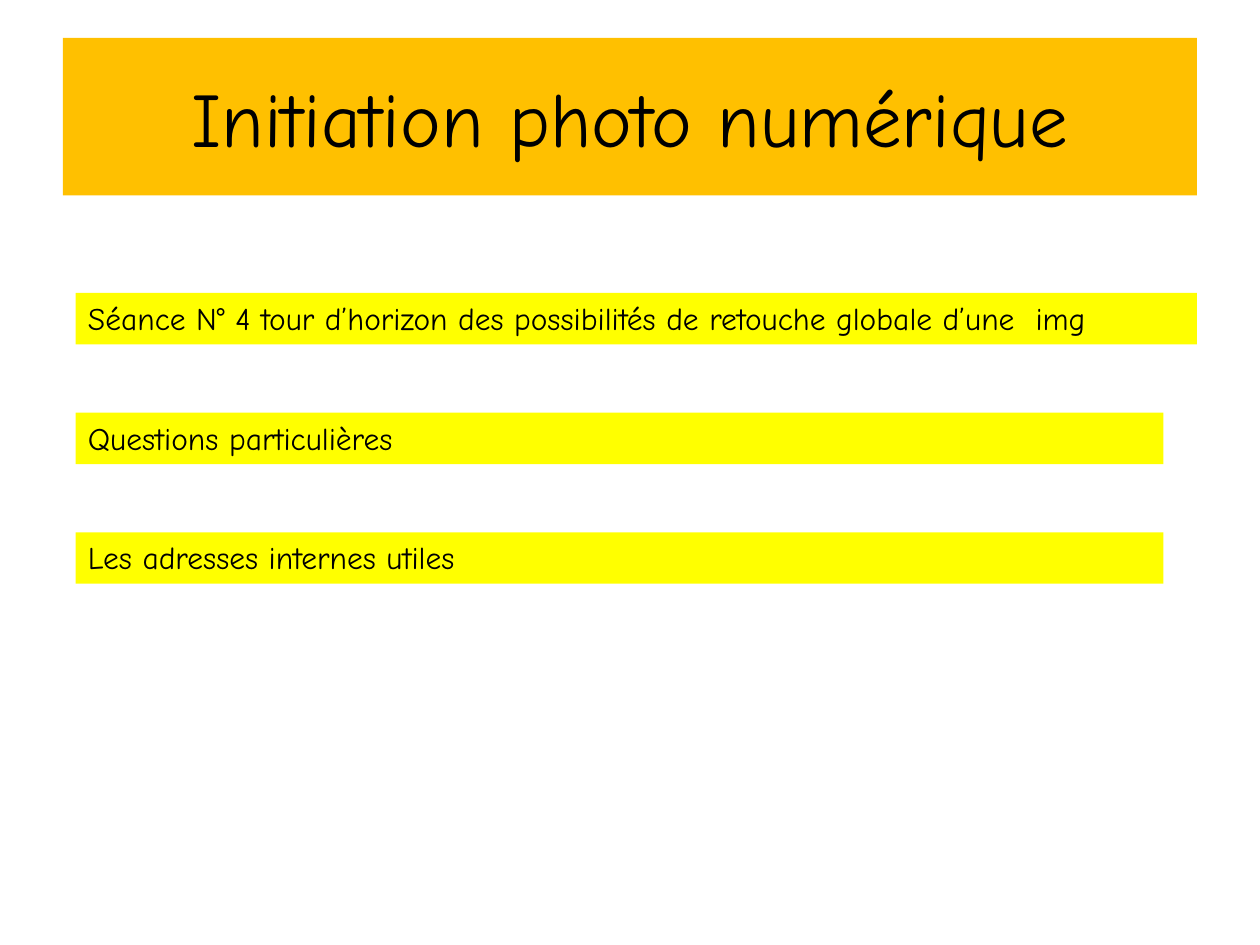
from dataclasses import dataclass

from pptx import Presentation
from pptx.dml.color import RGBColor
from pptx.enum.text import MSO_ANCHOR, PP_ALIGN
from pptx.util import Inches, Pt


@dataclass(frozen=True)
class Theme:
    """Colours, font and type sizes of the slide."""
    font: str = "Comic Neue"
    text: RGBColor = RGBColor(0x00, 0x00, 0x00)
    banner: RGBColor = RGBColor(0xFF, 0xC0, 0x00)
    topic: RGBColor = RGBColor(0xFF, 0xFF, 0x00)
    title_size: Pt = Pt(44)
    topic_size: Pt = Pt(18)


@dataclass(frozen=True)
class Box:
    """A rectangle in inches."""
    left: float
    top: float
    width: float
    height: float

    def share(self, left, top, width, height):
        """Return the box lying at the given shares of this one."""
        return Box(self.left + left * self.width, self.top + top * self.height,
                   width * self.width, height * self.height)


THEME = Theme()
PAGE = Box(0, 0, 10, 7.5)
TITLE = "Initiation photo numérique"
TOPICS = [
    ("Séance N° 4 tour d’horizon des possibilités de retouche globale d’une  img", 1),
    ("Questions particulières", 0.97),
    ("Les adresses internes utiles", 0.97),
]


def add_band(slide, box, text, fill, size):
    """Add a filled text box and return its text frame and paragraph."""
    shape = slide.shapes.add_textbox(*map(Inches, (box.left, box.top, box.width, box.height)))
    shape.fill.solid()
    shape.fill.fore_color.rgb = fill
    frame = shape.text_frame
    frame.word_wrap = True
    paragraph = frame.paragraphs[0]
    paragraph.text = text
    paragraph.font.name = THEME.font
    paragraph.font.size = size
    paragraph.font.color.rgb = THEME.text
    return frame, paragraph


def add_title(slide, box):
    """Fill the box with the centred title banner."""
    frame, paragraph = add_band(slide, box, TITLE, THEME.banner, THEME.title_size)
    frame.vertical_anchor = MSO_ANCHOR.MIDDLE
    paragraph.alignment = PP_ALIGN.CENTER


def add_topics(slide, box):
    """Stack the topic bands in equal rows of the box."""
    row = 1 / len(TOPICS)
    for index, (text, width) in enumerate(TOPICS):
        band = box.share(0, index * row, width, row * 0.43)
        add_band(slide, band, text, THEME.topic, THEME.topic_size)


def main():
    """Build and save the slide."""
    presentation = Presentation()
    presentation.slide_width = Inches(PAGE.width)
    presentation.slide_height = Inches(PAGE.height)
    slide = presentation.slides.add_slide(presentation.slide_layouts[6])
    add_title(slide, PAGE.share(0.05, 0.04, 0.9, 1 / 6))
    add_topics(slide, PAGE.share(0.06, 0.31, 0.89, 0.38))
    presentation.save("out.pptx")


if __name__ == "__main__":
    main()
